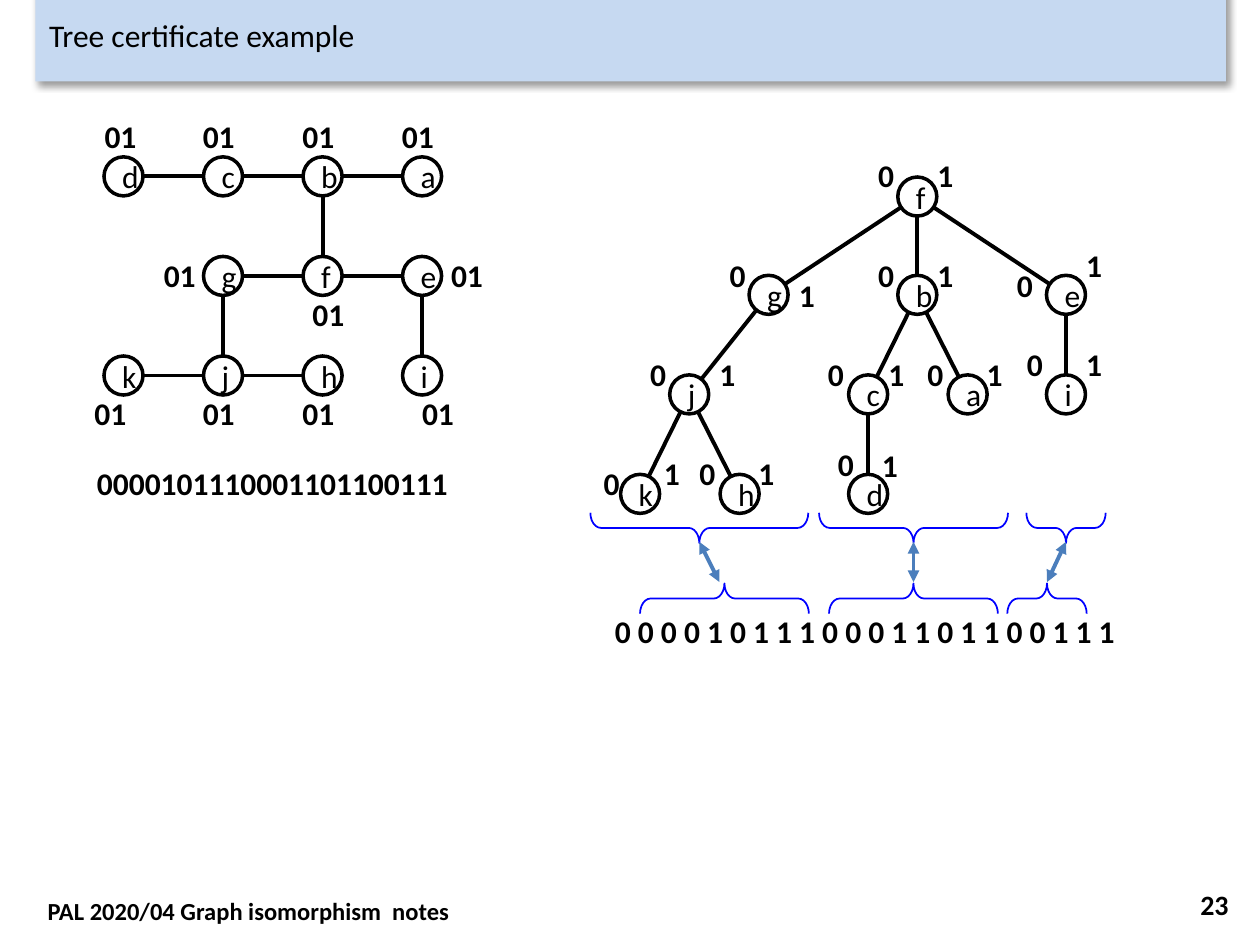
"""Builds the tree certificate slide: a graph, its rooted tree and the code string."""
from lxml.etree import SubElement
from pptx import Presentation
from pptx.dml.color import RGBColor
from pptx.enum.shapes import MSO_CONNECTOR, MSO_SHAPE
from pptx.enum.text import MSO_ANCHOR, MSO_AUTO_SIZE, PP_ALIGN
from pptx.oxml.ns import qn
from pptx.util import Inches, Pt

BLACK = RGBColor(0x00, 0x00, 0x00)
WHITE = RGBColor(0xFF, 0xFF, 0xFF)
BAND_BLUE = RGBColor(0xC6, 0xD9, 0xF1)
BRACE_BLUE = RGBColor(0x00, 0x00, 0xFF)
ARROW_BLUE = RGBColor(0x4B, 0x7E, 0xBC)
FONT = "Calibri"
NODE_SIZE = 0.31
BRACE_DEPTH = 0.24
LABEL_HEIGHT = 0.3
DIGIT_WIDTH = 0.13

GRID_X, GRID_Y, GRID_STEP = 0.98, 1.4, 0.79
GRAPH_ROWS = ["dcba", " gfe", "kjhi"]
GRAPH_LINES = ["da", "bf", "ei", "ge", "gj", "kh"]
GRAPH_LABELS = {
    "d": (0.83, 0.93), "c": (1.61, 0.93), "b": (2.4, 0.93), "a": (3.19, 0.93),
    "g": (1.3, 2.03), "f": (2.48, 2.34), "e": (3.58, 2.03),
    "k": (0.75, 3.13), "j": (1.61, 3.13), "h": (2.4, 3.13), "i": (3.35, 3.13),
}

TREE_NODES = {
    "f": (7.28, 1.56),
    "g": (6.1, 2.34), "b": (7.28, 2.34), "e": (8.46, 2.34),
    "j": (5.47, 3.13), "c": (6.89, 3.13), "a": (7.68, 3.13), "i": (8.46, 3.13),
    "k": (5.08, 3.92), "h": (5.87, 3.92), "d": (6.89, 3.92),
}
TREE_LINES = ["fg", "fb", "fe", "gj", "bc", "ba", "ei", "jk", "jh", "cd"]
TREE_LABELS = {
    "f": ((6.97, 1.24), (7.44, 1.24)),
    "g": ((5.79, 2.03), (6.34, 2.19)),
    "b": ((6.97, 2.03), (7.44, 2.03)),
    "e": ((8.07, 2.11), (8.62, 1.95)),
    "j": ((5.16, 2.82), (5.71, 2.82)),
    "c": ((6.57, 2.82), (7.05, 2.82)),
    "a": ((7.36, 2.82), (7.83, 2.82)),
    "i": ((8.15, 2.74), (8.62, 2.74)),
    "k": ((4.79, 3.68), (5.27, 3.6)),
    "h": ((5.55, 3.6), (6.02, 3.6)),
    "d": ((6.65, 3.53), (7, 3.54)),
}

SUBTREE_BRACES = [(5.55, 1.73), (7.25, 1.5), (8.46, 0.63)]
CODE_BRACES = [(5.75, 1.34), (7.25, 1.34), (8.31, 0.63)]
MATCH_ARROWS = [(5.55, 5.71), (7.25, 7.25), (8.46, 8.31)]


def write(frame, text, size=18, bold=False, align=PP_ALIGN.LEFT,
          anchor=MSO_ANCHOR.MIDDLE, wrap=True, insets=None, grow=False):
    """Put formatted text into a text frame."""
    frame.word_wrap = wrap
    frame.vertical_anchor = anchor
    frame.auto_size = MSO_AUTO_SIZE.SHAPE_TO_FIT_TEXT if grow else MSO_AUTO_SIZE.NONE
    if insets is not None:
        (frame.margin_left, frame.margin_top,
         frame.margin_right, frame.margin_bottom) = map(Inches, insets)
    paragraph = frame.paragraphs[0]
    paragraph.alignment = align
    run = paragraph.add_run()
    run.text = text
    run.font.name = FONT
    run.font.size = Pt(size)
    run.font.bold = bold
    run.font.color.rgb = BLACK


def add_label(slide, text, left, top, width, height=LABEL_HEIGHT, **text_format):
    """Add a bold text box."""
    label = slide.shapes.add_textbox(*map(Inches, (left, top, width, height)))
    write(label.text_frame, text, bold=True, **text_format)


def add_code(slide, text, left, top, width, wrap=False):
    """Add a tight label holding certificate digits."""
    add_label(slide, text, left, top, width, wrap=wrap, insets=(0, 0, 0, 0), grow=True)


def add_line(slide, start, end, color=BLACK, arrows=False):
    """Draw a straight line between two points."""
    line = slide.shapes.add_connector(
        MSO_CONNECTOR.STRAIGHT, *map(Inches, (*start, *end)))
    line.line.color.rgb = color
    line.line.width = Pt(2.25)
    if arrows:
        for tip in ("a:headEnd", "a:tailEnd"):
            SubElement(line.line._get_or_add_ln(), qn(tip), type="triangle")
    SubElement(line._element.spPr, qn("a:effectLst"))


def add_node(slide, letter, center):
    """Draw a lettered circle around a point."""
    left, top = (value - NODE_SIZE / 2 for value in center)
    node = slide.shapes.add_shape(
        MSO_SHAPE.OVAL, *map(Inches, (left, top, NODE_SIZE, NODE_SIZE)))
    node.shadow.inherit = False
    node.fill.solid()
    node.fill.fore_color.rgb = WHITE
    node.line.color.rgb = BLACK
    node.line.width = Pt(2)
    write(node.text_frame, letter, align=PP_ALIGN.CENTER)


def add_network(slide, nodes, lines):
    """Draw the edges and then the nodes over them."""
    for start, end in lines:
        add_line(slide, nodes[start], nodes[end])
    for letter, center in nodes.items():
        add_node(slide, letter, center)


def add_brace(slide, center_x, center_y, span, rotation):
    """Draw a horizontal brace that points down at 90 and up at 270 degrees."""
    brace = slide.shapes.add_shape(
        MSO_SHAPE.RIGHT_BRACE, Inches(center_x - BRACE_DEPTH / 2),
        Inches(center_y - span / 2), Inches(BRACE_DEPTH), Inches(span))
    brace.adjustments[0] = 0.35
    brace.rotation = rotation
    brace.shadow.inherit = False
    brace.fill.background()
    brace.line.color.rgb = BRACE_BLUE
    brace.line.width = Pt(1)


def add_title(slide, text):
    """Turn the title placeholder into a shadowed band."""
    title = slide.shapes.title
    title.left, title.top, title.width, title.height = map(
        Inches, (0.28, 0.13, 9.45, 0.3))
    title.fill.solid()
    title.fill.fore_color.rgb = BAND_BLUE
    effects = SubElement(title._element.spPr, qn("a:effectLst"))
    shadow = SubElement(effects, qn("a:outerShdw"), blurRad=str(Pt(4)),
                        dist=str(Pt(3)), dir=str(45 * 60000), rotWithShape="0")
    shade = SubElement(shadow, qn("a:srgbClr"), val=str(BLACK))
    SubElement(shade, qn("a:alpha"), val="40000")
    write(title.text_frame, text, insets=(0.11, 0, 0, 0), grow=True)


def add_graph(slide):
    """Draw the graph on its grid with the leaf codes."""
    nodes = {letter: (GRID_X + column * GRID_STEP, GRID_Y + row * GRID_STEP)
             for row, letters in enumerate(GRAPH_ROWS)
             for column, letter in enumerate(letters) if letter != " "}
    add_network(slide, nodes, GRAPH_LINES)
    for left, top in GRAPH_LABELS.values():
        add_code(slide, "01", left, top, 2 * DIGIT_WIDTH)
    add_code(slide, "0000101110001101100111", 0.77, 3.68, 2.97, wrap=True)


def add_tree(slide):
    """Draw the rooted tree with an opening 0 and a closing 1 at each node."""
    add_network(slide, TREE_NODES, TREE_LINES)
    for places in TREE_LABELS.values():
        for digit, (left, top) in zip("01", places):
            add_code(slide, digit, left, top, DIGIT_WIDTH)


def add_matching(slide):
    """Link each subtree to its part of the code."""
    add_code(slide, "0 0 0 0 1 0 1 1 1 0 0 0 1 1 0 1 1 0 0 1 1 1",
             4.88, 4.86, 4.49, wrap=True)
    for center, span in SUBTREE_BRACES:
        add_brace(slide, center, 4.19, span, 90)
    for center, span in CODE_BRACES:
        add_brace(slide, center, 4.75, span, 270)
    for upper, lower in MATCH_ARROWS:
        add_line(slide, (upper, 4.3), (lower, 4.62), ARROW_BLUE, arrows=True)


def main():
    """Build and save the slide."""
    deck = Presentation()
    deck.slide_width, deck.slide_height = Inches(10), Inches(7.5)
    slide = deck.slides.add_slide(deck.slide_layouts[5])
    add_title(slide, "Tree certificate example")
    add_graph(slide)
    add_tree(slide)
    add_matching(slide)
    add_label(slide, "23", 7.52, 6.98, 2.33, 0.4, size=16, align=PP_ALIGN.RIGHT)
    add_label(slide, "PAL 2020/04 Graph isomorphism  notes", 0.28, 7.06, 9.37, 0.34,
              size=14, anchor=MSO_ANCHOR.TOP, grow=True)
    deck.save("out.pptx")


if __name__ == "__main__":
    main()
